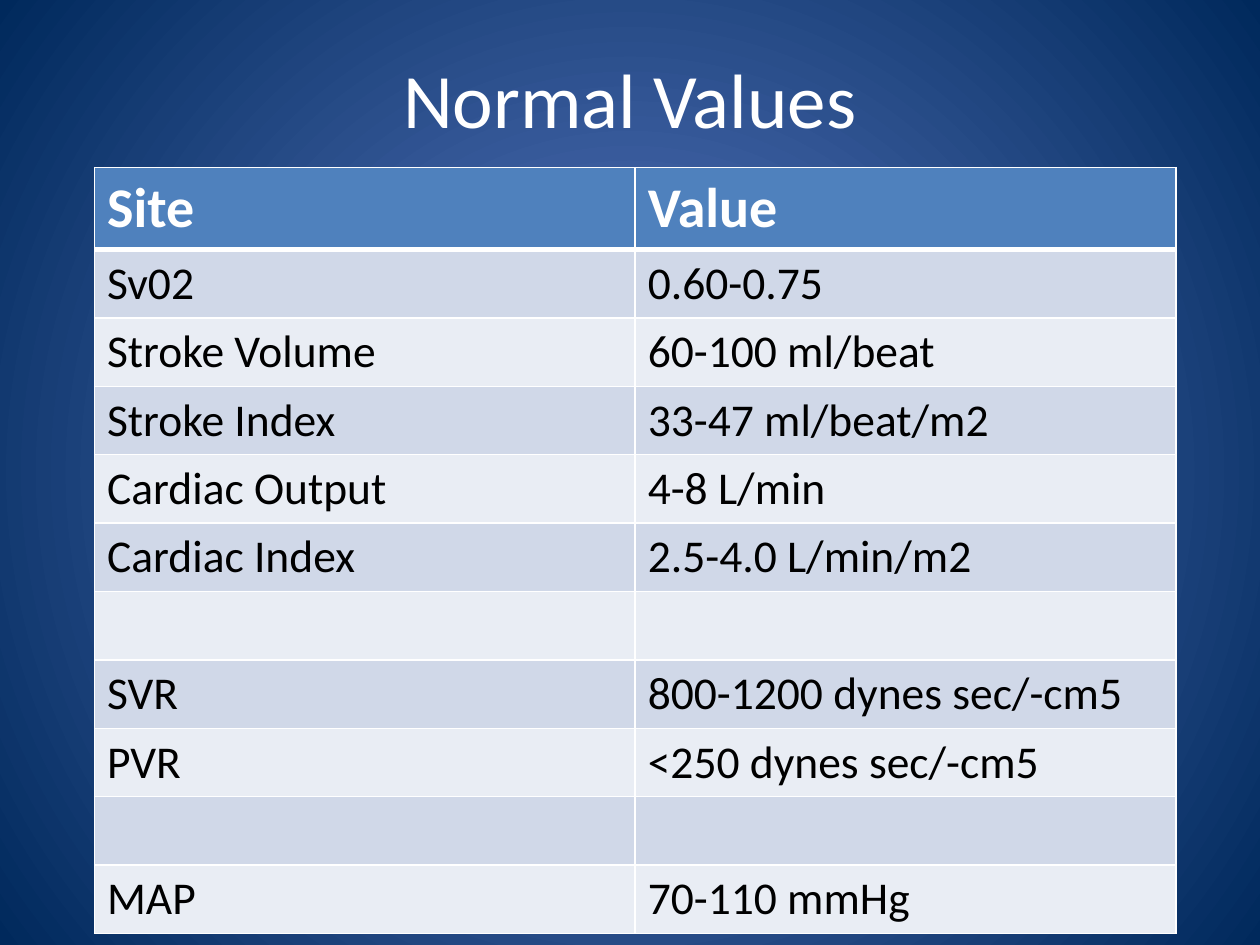
from lxml.etree import SubElement
from pptx import Presentation
from pptx.dml.color import RGBColor
from pptx.enum.text import MSO_ANCHOR, PP_ALIGN
from pptx.oxml.ns import qn
from pptx.util import Pt

TITLE = "Normal Values"
ROWS = [
    ("Site", "Value"),
    ("Sv02", "0.60-0.75"),
    ("Stroke Volume", "60-100 ml/beat"),
    ("Stroke Index", "33-47 ml/beat/m2"),
    ("Cardiac Output", "4-8 L/min"),
    ("Cardiac Index", "2.5-4.0 L/min/m2"),
    ("", ""),
    ("SVR", "800-1200 dynes sec/-cm5"),
    ("PVR", "<250 dynes sec/-cm5"),
    ("", ""),
    ("MAP", "70-110 mmHg"),
]
FONT = "Calibri"
WHITE, BLACK = "FFFFFF", "000000"
GLOW, NAVY = "5E7CC5", "00295C"
HEADER_FILL, BANDS = "4F81BD", ("E9EDF4", "D0D8E8")
LEFT, TOP, COLUMN_WIDTH = 54, 95.76, 309
HEADER_HEIGHT, ROW_HEIGHT = 46.8, 39.1


def rgb(color):
    return RGBColor.from_string(color)


def style(paragraph, size, color, bold=False):
    font = paragraph.font
    font.name, font.size, font.bold = FONT, Pt(size), bold
    font.color.rgb = rgb(color)


def add_borders(cell, widths):
    """Draw white cell edges; widths maps L, R, T, B (in that order) to points."""
    properties = cell._tc.get_or_add_tcPr()
    for side, width in widths.items():
        line = SubElement(properties, qn(f"a:ln{side}"), w=str(Pt(width)))
        fill = SubElement(line, qn("a:solidFill"))
        SubElement(fill, qn("a:srgbClr"), val=WHITE)


def set_background(slide):
    """Fill the slide with a circular gradient from its centre."""
    fill = slide.background.fill
    fill.gradient()
    for stop, position, color in zip(fill.gradient_stops, (0, 1), (GLOW, NAVY)):
        stop.position = position
        stop.color.rgb = rgb(color)
    linear = slide.element.find(".//" + qn("a:lin"))
    gradient = linear.getparent()
    gradient.remove(linear)
    circle = SubElement(gradient, qn("a:path"), {"path": "circle"})
    SubElement(circle, qn("a:fillToRect"), dict.fromkeys("ltrb", "50000"))


def add_title(slide):
    title = slide.shapes.title
    title.left, title.top, title.width, title.height = map(Pt, (36, 21.6, 648, 68.4))
    title.text_frame.text = TITLE
    title.text_frame.vertical_anchor = MSO_ANCHOR.MIDDLE
    heading = title.text_frame.paragraphs[0]
    heading.alignment = PP_ALIGN.CENTER
    style(heading, 44, WHITE)


def add_values(slide):
    columns = len(ROWS[0])
    height = HEADER_HEIGHT + ROW_HEIGHT * (len(ROWS) - 1)
    table = slide.shapes.add_table(
        len(ROWS), columns, Pt(LEFT), Pt(TOP), Pt(COLUMN_WIDTH * columns), Pt(height)
    ).table
    for column in table.columns:
        column.width = Pt(COLUMN_WIDTH)
    for r, texts in enumerate(ROWS):
        header = r == 0
        table.rows[r].height = Pt(HEADER_HEIGHT if header else ROW_HEIGHT)
        for c, text in enumerate(texts):
            cell = table.cell(r, c)
            cell.text = text
            style(cell.text_frame.paragraphs[0], 32 if header else 26,
                  WHITE if header else BLACK, header)
            add_borders(cell, {"L": 1, "R": 1, "T": 3 if r == 1 else 1, "B": 3 if header else 1})
            cell.fill.solid()
            cell.fill.fore_color.rgb = rgb(HEADER_FILL if header else BANDS[r % 2])


def main():
    deck = Presentation()
    deck.slide_width, deck.slide_height = Pt(720), Pt(540)
    slide = deck.slides.add_slide(deck.slide_layouts.get_by_name("Title Only"))
    set_background(slide)
    add_title(slide)
    add_values(slide)
    deck.save("out.pptx")


if __name__ == "__main__":
    main()
